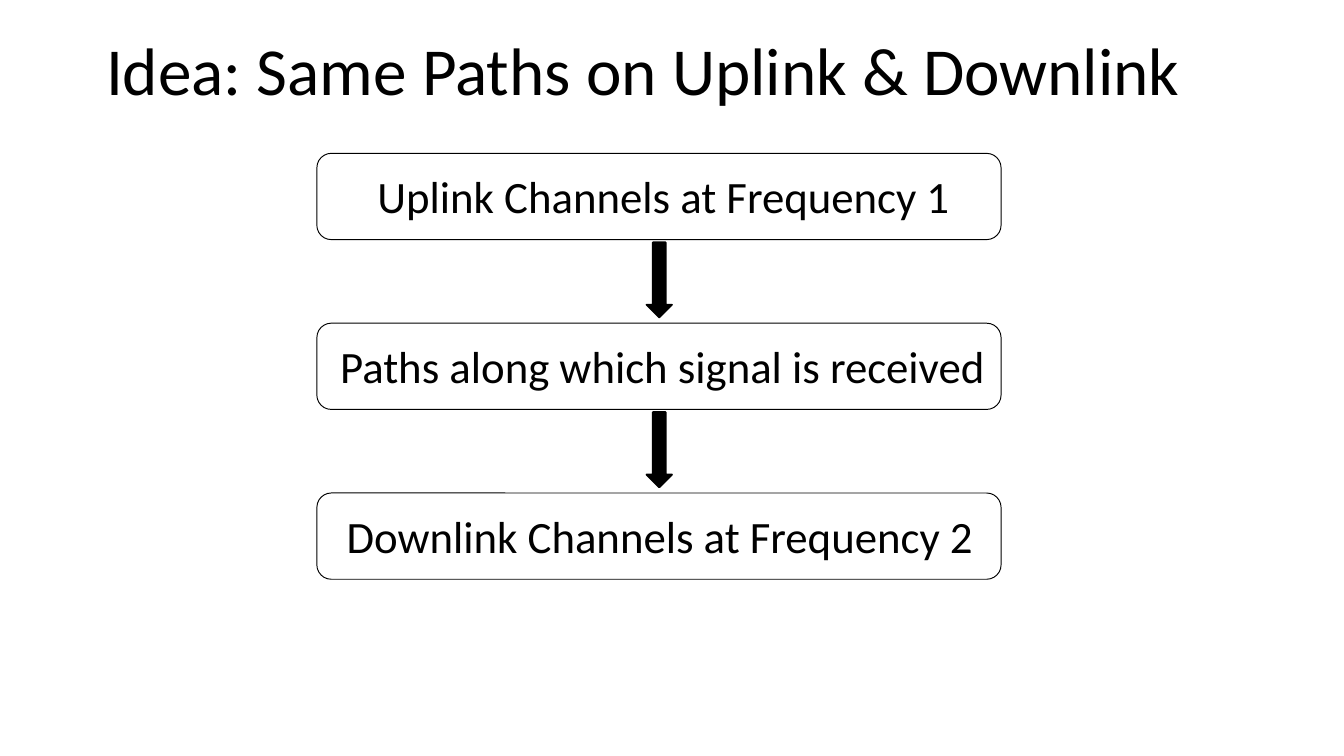
from dataclasses import dataclass

from pptx import Presentation
from pptx.dml.color import RGBColor
from pptx.enum.shapes import MSO_SHAPE
from pptx.enum.text import MSO_ANCHOR, MSO_AUTO_SIZE, PP_ALIGN
from pptx.shapes.autoshape import Shape
from pptx.slide import Slide
from pptx.text.text import _Paragraph as Para
from pptx.util import Cm, Pt

COLORS = {"ink": "000000", "paper": "FFFFFF"}
FONT = "Calibri"
LEFT, TOP, WIDTH, HEIGHT = 5.99, 2.9, 12.93, 1.63
PITCH = 3.21


@dataclass
class Step:
    text: str
    left: float
    width: float


STEPS = [
    Step("Uplink Channels at Frequency 1", 6.48, 12.12),
    Step("Paths along which signal is received", 6.12, 12.8),
    Step("Downlink Channels at Frequency 2", 6.17, 12.6),
]


def color(name: str) -> RGBColor:
    return RGBColor.from_string(COLORS[name])


def add_run(para: Para, text: str, size: float) -> None:
    run = para.add_run()
    run.text = text
    run.font.name = FONT
    run.font.size = Pt(size)
    run.font.color.rgb = color("ink")


def paint(shape: Shape, fill: str, line: float) -> None:
    shape.shadow.inherit = False
    shape.fill.solid()
    shape.fill.fore_color.rgb = color(fill)
    shape.line.color.rgb = color("ink")
    shape.line.width = Pt(line)


def add_title(slide: Slide, text: str) -> None:
    title = slide.shapes.title
    title.left, title.top = Cm(1.75), Cm(0)
    title.width, title.height = Cm(21.9), Cm(2.77)
    frame = title.text_frame
    frame.vertical_anchor = MSO_ANCHOR.MIDDLE
    frame.auto_size = MSO_AUTO_SIZE.NONE
    para = frame.paragraphs[0]
    para.alignment = PP_ALIGN.LEFT
    para.line_spacing = 0.9
    add_run(para, text, 36)


def add_step(slide: Slide, step: Step, top: float) -> None:
    """Group a rounded box with its label."""
    group = slide.shapes.add_group_shape()
    box = group.shapes.add_shape(
        MSO_SHAPE.ROUNDED_RECTANGLE, Cm(LEFT), Cm(top), Cm(WIDTH), Cm(HEIGHT))
    paint(box, "paper", 0.5)
    label = group.shapes.add_textbox(
        Cm(step.left), Cm(top + 0.17), Cm(step.width), Cm(1.28))
    frame = label.text_frame
    frame.word_wrap = False
    frame.auto_size = MSO_AUTO_SIZE.SHAPE_TO_FIT_TEXT
    para = frame.paragraphs[0]
    para.alignment = PP_ALIGN.CENTER
    add_run(para, step.text, 24)


def add_arrow(slide: Slide, top: float) -> None:
    """Draw a left arrow turned to point down."""
    arrow = slide.shapes.add_shape(
        MSO_SHAPE.LEFT_ARROW, Cm(11.75), Cm(top), Cm(1.42), Cm(0.48))
    arrow.rotation = 270
    paint(arrow, "ink", 1)


def main() -> None:
    deck = Presentation()
    deck.slide_width, deck.slide_height = Cm(25.4), Cm(14.29)
    slide = deck.slides.add_slide(deck.slide_layouts[5])
    add_title(slide, "Idea: Same Paths on Uplink & Downlink")
    for row, step in enumerate(STEPS):
        top = TOP + row * PITCH
        add_step(slide, step, top)
        if row < len(STEPS) - 1:
            add_arrow(slide, top + 2.15)
    deck.save("out.pptx")


if __name__ == "__main__":
    main()
